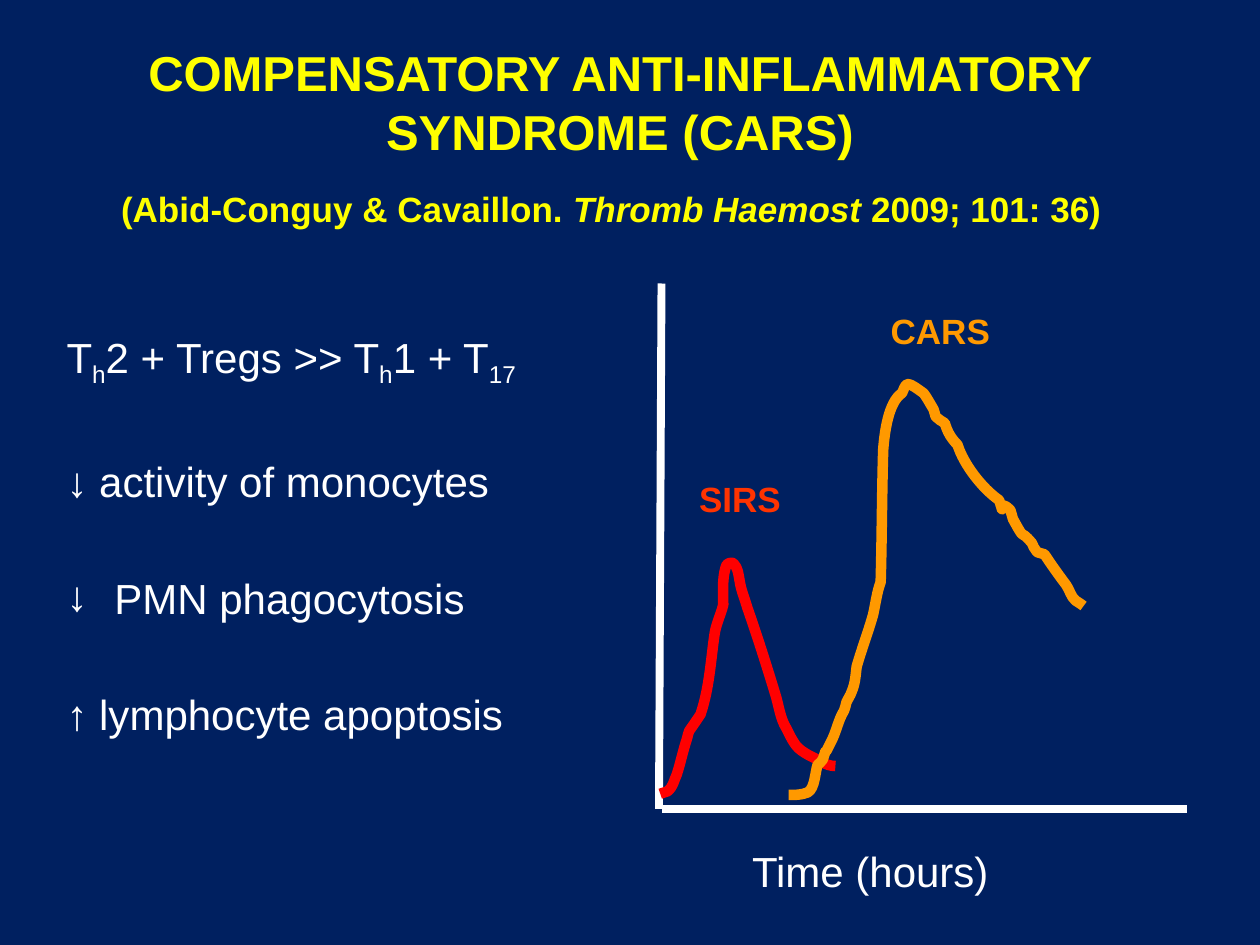
from dataclasses import dataclass

from lxml.etree import SubElement
from pptx import Presentation
from pptx.dml.color import RGBColor as Rgb
from pptx.enum.shapes import MSO_CONNECTOR as Link
from pptx.enum.text import MSO_ANCHOR as Anchor, MSO_AUTO_SIZE as Fit, PP_ALIGN as Align
from pptx.oxml.ns import qn
from pptx.util import Inches, Pt


@dataclass(frozen=True)
class Theme:
    face: str = "Arial"
    back: str = "002060"
    text: str = "FFFFFF"
    title: str = "FFFF00"
    sirs: str = "FF0000"
    sirs_name: str = "FF3300"
    cars: str = "FF9900"
    head: int = 28
    body: int = 24
    small: int = 20
    gap: int = 36
    axis: float = 4.5
    curve: float = 6


THEME = Theme()

# Each row after the first holds two control points and an end point.
SIRS = [
    (5.24, 6.3),
    (5.26, 6.29), (5.28, 6.29), (5.3, 6.28),
    (5.34, 6.25), (5.35, 6.19), (5.37, 6.15),
    (5.4, 6.06), (5.42, 5.96), (5.45, 5.87),
    (5.46, 5.84), (5.46, 5.82), (5.47, 5.8),
    (5.5, 5.76), (5.56, 5.67), (5.56, 5.67),
    (5.63, 5.46), (5.64, 5.25), (5.67, 5.04),
    (5.68, 4.96), (5.72, 4.88), (5.74, 4.8),
    (5.74, 4.7), (5.73, 4.6), (5.76, 4.5),
    (5.76, 4.47), (5.81, 4.46), (5.82, 4.47),
    (5.86, 4.51), (5.86, 4.56), (5.87, 4.61),
    (5.88, 4.68), (5.91, 4.75), (5.93, 4.82),
    (6.01, 5.05), (6.08, 5.27), (6.15, 5.5),
    (6.18, 5.59), (6.19, 5.7), (6.24, 5.78),
    (6.31, 5.92), (6.32, 5.94), (6.43, 6),
    (6.5, 6.03), (6.55, 6.08), (6.63, 6.08),
]
CARS = [
    (6.26, 6.31),
    (6.31, 6.31), (6.36, 6.31), (6.41, 6.29),
    (6.47, 6.26), (6.47, 6.12), (6.49, 6.07),
    (6.5, 6.06), (6.52, 6.05), (6.53, 6.03),
    (6.58, 5.88), (6.52, 6.05), (6.59, 5.9),
    (6.64, 5.81), (6.65, 5.72), (6.7, 5.64),
    (6.71, 5.62), (6.71, 5.6), (6.72, 5.57),
    (6.73, 5.55), (6.75, 5.52), (6.76, 5.49),
    (6.79, 5.42), (6.79, 5.36), (6.8, 5.29),
    (6.84, 5.15), (6.89, 5.02), (6.93, 4.88),
    (6.95, 4.79), (6.96, 4.7), (6.99, 4.62),
    (7, 4.27), (7, 3.92), (7.01, 3.57),
    (7.02, 3.44), (7.05, 3.19), (7.16, 3.12),
    (7.17, 3.1), (7.18, 3.06), (7.2, 3.05),
    (7.23, 3.04), (7.31, 3.11), (7.33, 3.12),
    (7.36, 3.16), (7.38, 3.2), (7.41, 3.25),
    (7.42, 3.27), (7.42, 3.3), (7.43, 3.31),
    (7.45, 3.33), (7.47, 3.34), (7.5, 3.36),
    (7.52, 3.43), (7.55, 3.48), (7.6, 3.53),
    (7.65, 3.69), (7.8, 3.88), (7.93, 3.97),
    (7.99, 4.15), (7.9, 3.93), (8.02, 4.05),
    (8.03, 4.07), (8.03, 4.1), (8.04, 4.12),
    (8.15, 4.32), (8.08, 4.18), (8.19, 4.31),
    (8.2, 4.33), (8.21, 4.36), (8.23, 4.38),
    (8.24, 4.39), (8.27, 4.39), (8.29, 4.4),
    (8.35, 4.49), (8.4, 4.56), (8.46, 4.64),
    (8.49, 4.68), (8.5, 4.74), (8.54, 4.77),
    (8.56, 4.78), (8.6, 4.81), (8.6, 4.81),
]


def style(font, color, size, bold=False):
    font.name, font.size, font.bold = THEME.face, Pt(size), bold
    font.color.rgb = Rgb.from_string(color)


def stroke(shape, color, width):
    shape.line.color.rgb = Rgb.from_string(color)
    shape.line.width = Pt(width)


def add_title(slide):
    shape = slide.shapes.title
    shape.left, shape.top = Inches(0.67), Inches(0.28)
    shape.width, shape.height = Inches(8.5), Inches(1.64)
    frame = shape.text_frame
    frame.auto_size, frame.vertical_anchor = Fit.NONE, Anchor.BOTTOM
    para = frame.paragraphs[0]
    para.alignment = Align.CENTER
    style(para.font, THEME.title, THEME.head, True)
    para.add_run().text = "COMPENSATORY ANTI-INFLAMMATORY SYNDROME (CARS)"
    para.add_line_break()
    for text, size, italic in (
        ("(Abid-Conguy & Cavaillon. ", THEME.small, False),
        ("Thromb Haemost ", THEME.small, True),
        ("2009; 101: 36)", THEME.small, False),
        (" ", THEME.gap, False),
    ):
        run = para.add_run()
        run.text = text
        run.font.size, run.font.italic = Pt(size), italic


def add_points(slide):
    box = slide.shapes.add_textbox(Inches(0.43), Inches(2.58), Inches(4.4), Inches(4.5))
    frame = box.text_frame
    frame.word_wrap = True
    first = frame.paragraphs[0]
    style(first.font, THEME.text, THEME.body)
    for text, low in (
        ("T", False), ("h", True), ("2 + Tregs >> T", False),
        ("h", True), ("1 + T", False), ("17", True),
    ):
        run = first.add_run()
        run.text = text
        if low:
            run.font._element.set("baseline", "-25000")
    for text, mark in (
        ("↓ activity of monocytes", None),
        ("PMN phagocytosis", "↓"),
        ("↑ lymphocyte apoptosis", None),
    ):
        para = frame.add_paragraph()
        para.text = text
        para.space_before = Pt(38)
        style(para.font, THEME.text, THEME.body)
        if mark:
            add_bullet(para, mark)


def add_bullet(para, mark):
    props = para._p.get_or_add_pPr()
    props.set("marL", str(Inches(0.38)))
    props.set("indent", str(-Inches(0.38)))
    for tag, key, value in (
        ("a:buFont", "typeface", THEME.face), ("a:buChar", "char", mark),
    ):
        part = SubElement(props, qn(tag))
        part.set(key, value)
        props.find(qn("a:defRPr")).addprevious(part)


def add_label(slide, text, left, top, width, height, color, size, bold=False):
    box = slide.shapes.add_textbox(*map(Inches, (left, top, width, height)))
    box.text_frame.word_wrap = False
    para = box.text_frame.paragraphs[0]
    para.text = text
    style(para.font, color, size, bold)


def add_axis(slide, *ends):
    line = slide.shapes.add_connector(Link.STRAIGHT, *map(Inches, ends))
    stroke(line, THEME.text, THEME.axis)
    SubElement(line._element.spPr, qn("a:effectLst"))


def bend(shape, points):
    """Turn each straight segment into a cubic Bezier one."""
    lines = list(shape._element.iter(qn("a:lnTo")))
    for n, line in enumerate(lines):
        cubic = SubElement(line.getparent(), qn("a:cubicBezTo"))
        for x, y in points[3 * n + 1:3 * n + 4]:
            spot = SubElement(cubic, qn("a:pt"))
            spot.set("x", str(Inches(x) - shape.left))
            spot.set("y", str(Inches(y) - shape.top))
        line.getparent().replace(line, cubic)


def add_curve(slide, points, color):
    ends = [tuple(map(Inches, point)) for point in points[::3]]
    build = slide.shapes.build_freeform(*ends[0])
    build.add_line_segments(ends[1:], close=False)
    curve = build.convert_to_shape()
    bend(curve, points)
    curve.shadow.inherit = False
    curve.fill.background()
    stroke(curve, color, THEME.curve)


def main():
    deck = Presentation()
    deck.slide_width, deck.slide_height = Inches(10), Inches(7.5)
    slide = deck.slides.add_slide(deck.slide_layouts[5])
    slide.background.fill.solid()
    slide.background.fill.fore_color.rgb = Rgb.from_string(THEME.back)
    add_title(slide)
    add_points(slide)
    add_axis(slide, 5.25, 6.42, 9.42, 6.42)
    add_axis(slide, 5.23, 6.42, 5.25, 2.25)
    add_label(slide, "Time (hours)", 5.87, 6.66, 2.09, 0.5, THEME.text, THEME.body)
    add_curve(slide, SIRS, THEME.sirs)
    add_curve(slide, CARS, THEME.cars)
    add_label(slide, "SIRS", 5.45, 3.74, 0.85, 0.43, THEME.sirs_name, THEME.small, True)
    add_label(slide, "CARS", 6.97, 2.41, 0.99, 0.43, THEME.cars, THEME.small, True)
    deck.save("out.pptx")


if __name__ == "__main__":
    main()
